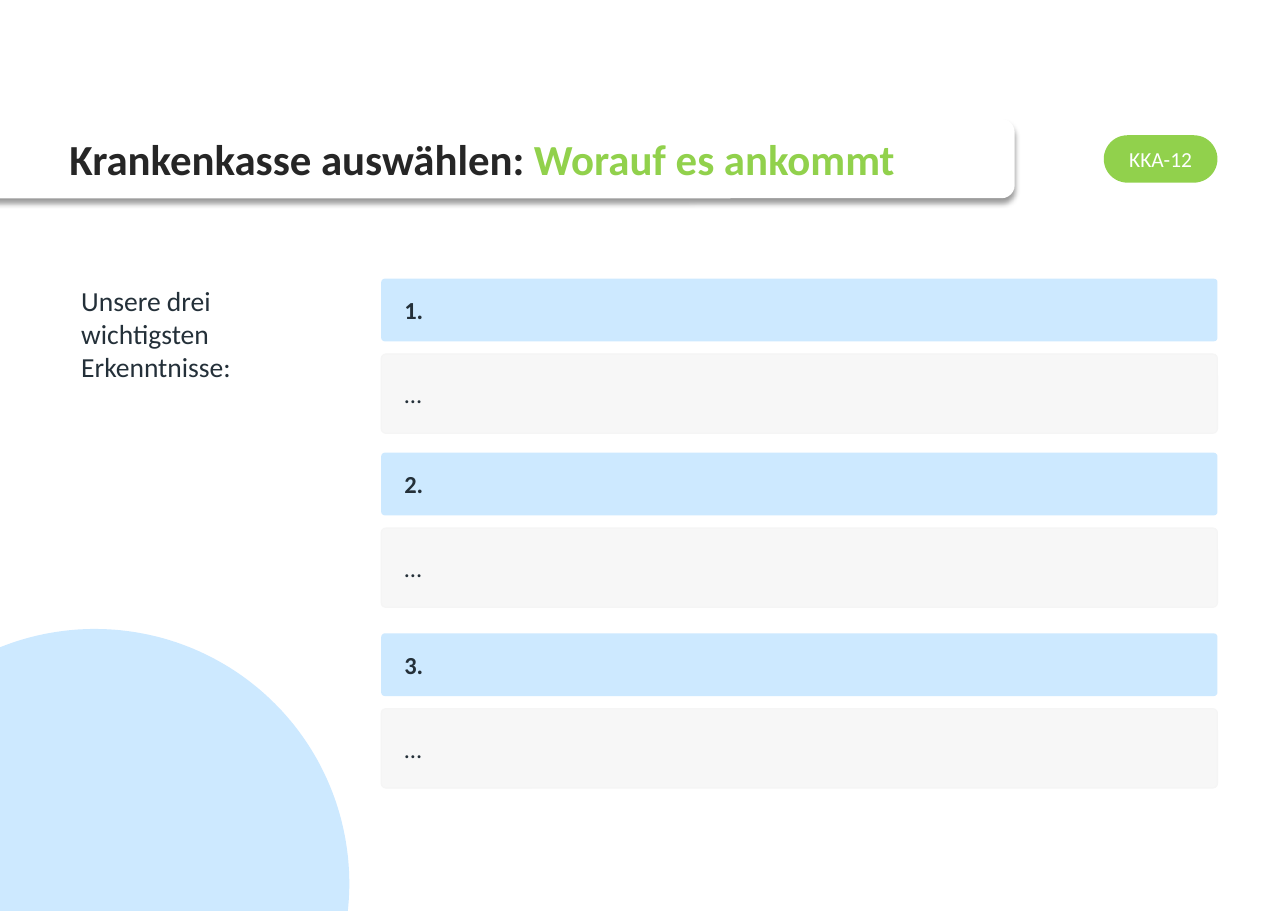
from dataclasses import dataclass
from math import asin, acos, cos, pi, sin

from lxml.etree import SubElement
from pptx import Presentation
from pptx.dml.color import RGBColor
from pptx.enum.shapes import MSO_SHAPE
from pptx.enum.text import MSO_ANCHOR, MSO_AUTO_SIZE, PP_ALIGN
from pptx.oxml.ns import qn
from pptx.util import Pt


@dataclass(frozen=True)
class Theme:
    font: str = "Calibri"
    white: RGBColor = RGBColor(0xFF, 0xFF, 0xFF)
    heading: RGBColor = RGBColor(0x26, 0x26, 0x26)
    ink: RGBColor = RGBColor(0x24, 0x30, 0x39)
    green: RGBColor = RGBColor(0x91, 0xD1, 0x4C)
    blue: RGBColor = RGBColor(0xCD, 0xE9, 0xFF)
    grey: RGBColor = RGBColor(0xF5, 0xF5, 0xF5)
    title_size: int = 28
    lead_size: int = 18
    row_size: int = 16
    badge_size: int = 14


theme = Theme()


def paint(shape, color):
    shape.fill.solid()
    shape.fill.fore_color.rgb = color
    shape.line.fill.background()
    shape.shadow.inherit = False


def write(box, spans, size, insets, anchor=MSO_ANCHOR.MIDDLE, align=PP_ALIGN.LEFT, bold=False):
    left, top, right, bottom = map(Pt, insets)
    frame_format = {
        "word_wrap": True,
        "auto_size": MSO_AUTO_SIZE.NONE,
        "vertical_anchor": anchor,
        "margin_left": left,
        "margin_top": top,
        "margin_right": right,
        "margin_bottom": bottom,
    }
    for name, value in frame_format.items():
        setattr(box.text_frame, name, value)
    para = box.text_frame.paragraphs[0]
    para.alignment = align
    for text, color in spans:
        span = para.add_run()
        span.text = text
        span.font.color.rgb = color
        for name, value in {"name": theme.font, "size": Pt(size), "bold": bold}.items():
            setattr(span.font, name, value)


page_width, page_height = 841.68, 595.44
deck = Presentation()
deck.slide_width, deck.slide_height = Pt(page_width), Pt(page_height)
page = deck.slides.add_slide(deck.slide_layouts[5])
shapes = page.shapes

center_x, center_y, radius = 62, 577.4, 166.3
start = acos(-center_x / radius)
end = -asin((page_height - center_y) / radius)
steps = 90
angles = [start + (end - start) * step / steps for step in range(steps + 1)]
arc = [(Pt(center_x + radius * cos(angle)), Pt(center_y - radius * sin(angle))) for angle in angles]
builder = shapes.build_freeform(0, Pt(page_height), scale=1.0)
builder.add_line_segments(arc, close=True)
paint(builder.convert_to_shape(), theme.blue)

badge = shapes.add_shape(MSO_SHAPE.ROUNDED_RECTANGLE, Pt(721.3), Pt(88.4), Pt(74.3), Pt(31))
badge.adjustments[0] = 0.5
paint(badge, theme.green)
write(badge, [("KKA-12", theme.white)], theme.badge_size, (0, 3.6, 0, 3.6), align=PP_ALIGN.CENTER)

banner_top, banner_height = 77.76, 51.84
banner = shapes.add_shape(
    MSO_SHAPE.ROUNDED_RECTANGLE, Pt(-59.76), Pt(banner_top), Pt(722.88), Pt(banner_height)
)
banner.adjustments[0] = 0.167
paint(banner, theme.white)
effects = banner._element.spPr.find(qn("a:effectLst"))
shadow = SubElement(
    effects, qn("a:outerShdw"), blurRad=str(Pt(4)), dist=str(Pt(3)), dir="5400000", algn="t", rotWithShape="0"
)
shade = SubElement(shadow, qn("a:srgbClr"), val="000000")
SubElement(shade, qn("a:alpha"), val="40000")

title = shapes.title
title_place = {"left": 0, "top": banner_top, "width": 663.12, "height": banner_height}
for name, value in title_place.items():
    setattr(title, name, Pt(value))
shapes._spTree.remove(title._element)
shapes._spTree.append(title._element)
title_spans = [("Krankenkasse auswählen: ", theme.heading), ("Worauf es ankommt", theme.green)]
write(title, title_spans, theme.title_size, (45.36, 3.6, 7.2, 3.6), bold=True)

lead = shapes.add_textbox(Pt(46), Pt(182.16), Pt(159), Pt(72.7))
write(
    lead,
    [("Unsere drei wichtigsten Erkenntnisse:", theme.ink)],
    theme.lead_size,
    (7.2, 3.6, 7.2, 3.6),
    anchor=MSO_ANCHOR.TOP,
)

row_left, row_width = 249.1, 546.5
row_insets = (14.4, 0, 8.64, 0)
for number, row_top in enumerate((182.16, 295.92, 414), start=1):
    bars = (
        (f"{number}.", row_top, 41, theme.blue, True),
        ("…", row_top + 49.2, 51.84, theme.grey, False),
    )
    for text, top, height, color, is_heading in bars:
        bar = shapes.add_shape(
            MSO_SHAPE.ROUNDED_RECTANGLE, Pt(row_left), Pt(top), Pt(row_width), Pt(height)
        )
        bar.adjustments[0] = 0.058
        paint(bar, color)
        if not is_heading:
            bar.line.color.rgb = color
            bar.line.width = Pt(0.75)
            tint = bar._element.spPr.find(qn("a:solidFill")).find(qn("a:srgbClr"))
            SubElement(tint, qn("a:alpha"), val="70000")
        write(bar, [(text, theme.ink)], theme.row_size, row_insets, bold=is_heading)

deck.save("out.pptx")
